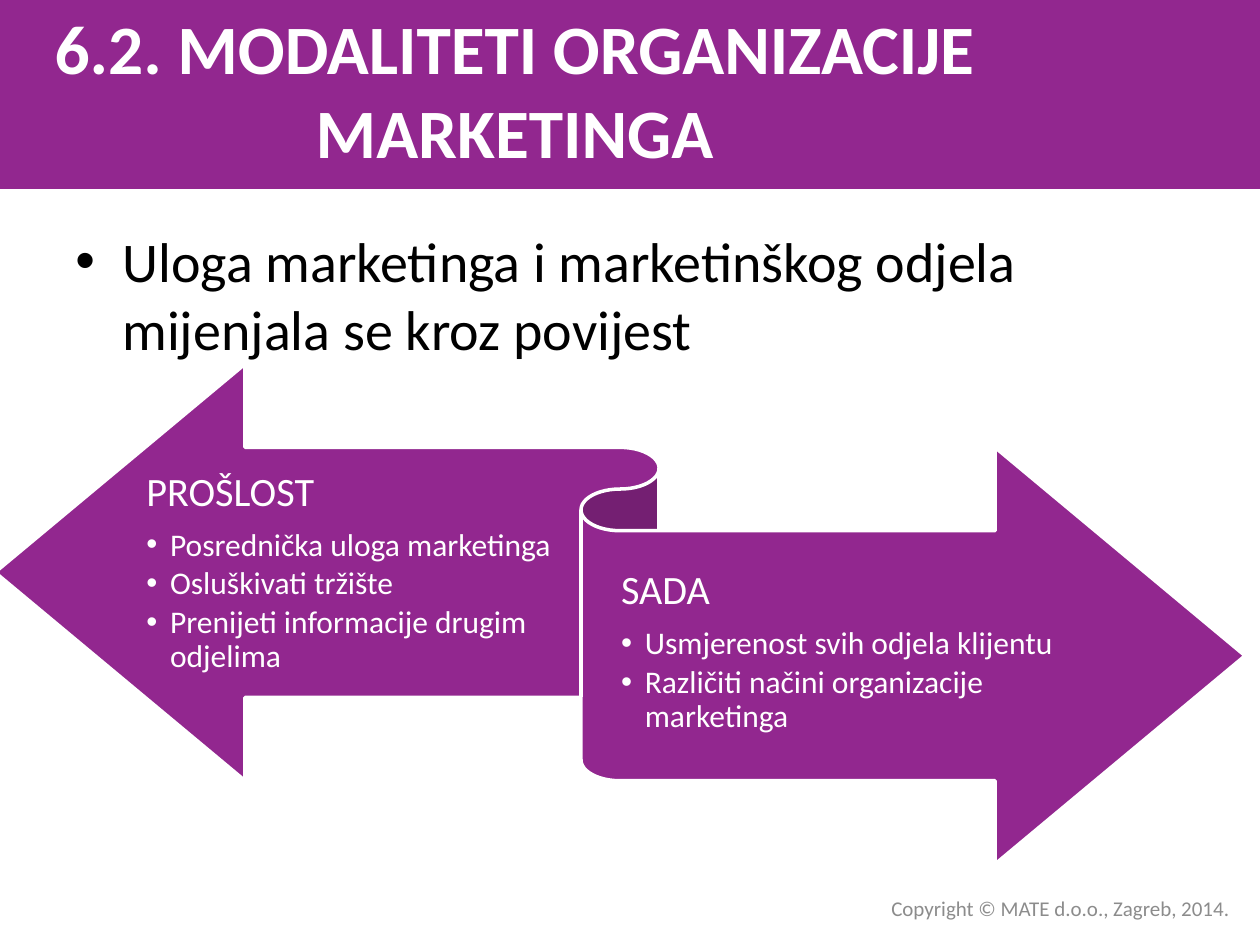
from dataclasses import dataclass

from lxml import etree
from pptx import Presentation
from pptx import util as u
from pptx.dml.color import RGBColor
from pptx.enum import shapes, text
from pptx.oxml.ns import qn

PURPLE = RGBColor(0x92, 0x27, 0x8F)
WHITE = RGBColor(0xFF, 0xFF, 0xFF)
BLACK = RGBColor(0, 0, 0)
GRAY = RGBColor(0x8C, 0x8C, 0x8C)
FONT = "Calibri"


@dataclass
class Box:
    left: float
    top: float
    width: float
    height: float

    def lengths(self) -> list[u.Cm]:
        return [u.Cm(value) for value in (self.left, self.top, self.width, self.height)]


@dataclass
class Period:
    box: Box
    heading: str
    points: list[str]


PERIODS = [
    Period(
        Box(2.95, 9.1, 8.31, 4.92),
        "PROŠLOST",
        [
            "Posrednička uloga marketinga",
            "Osluškivati tržište",
            "Prenijeti informacije drugim odjelima",
        ],
    ),
    Period(
        Box(12.52, 10.7, 9.83, 4.92),
        "SADA",
        ["Usmjerenost svih odjela klijentu", "Različiti načini organizacije marketinga"],
    ),
]


def format_paragraph(paragraph, size: float, color: RGBColor, bold: bool = False) -> None:
    for run in paragraph.runs:
        run.font.name = FONT
        run.font.size = u.Pt(size)
        run.font.bold = bold
        run.font.color.rgb = color


def add_bullet(paragraph, indent: float) -> None:
    properties = paragraph._p.get_or_add_pPr()
    properties.set("marL", str(u.Cm(indent)))
    properties.set("indent", str(-u.Cm(indent)))
    etree.SubElement(properties, qn("a:buFont"), typeface="Arial")
    etree.SubElement(properties, qn("a:buChar"), char="•")


def add_text_box(slide, box: Box, content: str, anchor):
    text_frame = slide.shapes.add_textbox(*box.lengths()).text_frame
    text_frame.word_wrap = True
    text_frame.vertical_anchor = anchor
    text_frame.text = content
    return text_frame


def add_preset(slide, kind, box: Box):
    shape = slide.shapes.add_shape(kind, *box.lengths())
    shape.shadow.inherit = False
    shape.fill.solid()
    shape.fill.fore_color.rgb = PURPLE
    return shape


def add_title(slide) -> None:
    title = slide.shapes.title
    title.left, title.top, title.width, title.height = Box(0, 0.2, 20.75, 3.18).lengths()
    text_frame = title.text_frame
    text_frame.text = "6.2. MODALITETI ORGANIZACIJE MARKETINGA"
    text_frame.auto_size = text.MSO_AUTO_SIZE.NONE
    text_frame.vertical_anchor = text.MSO_ANCHOR.MIDDLE
    text_frame.paragraphs[0].alignment = text.PP_ALIGN.CENTER
    format_paragraph(text_frame.paragraphs[0], 39.6, WHITE, bold=True)
    band = add_preset(slide, shapes.MSO_SHAPE.RECTANGLE, Box(0, 0, 25.4, 3.81))
    band.line.fill.background()
    title.element.addprevious(band.element)


def add_period(slide, period: Period) -> None:
    content = "\n".join([period.heading, *period.points])
    text_frame = add_text_box(slide, period.box, content, text.MSO_ANCHOR.MIDDLE)
    text_frame.margin_left = text_frame.margin_right = 0
    text_frame.margin_top, text_frame.margin_bottom = u.Cm(0.23), u.Cm(0.25)
    heading, *points = text_frame.paragraphs
    heading.line_spacing = 0.9
    heading.space_after = u.Pt(8)
    format_paragraph(heading, 23, WHITE)
    for point in points:
        add_bullet(point, 0.48)
        point.level = 1
        point.line_spacing = 0.9
        point.space_after = u.Pt(2.7)
        format_paragraph(point, 18, WHITE)


def main() -> None:
    presentation = Presentation()
    presentation.slide_width, presentation.slide_height = u.Cm(25.4), u.Cm(19.05)
    slide = presentation.slides.add_slide(presentation.slide_layouts[5])
    add_title(slide)

    body = add_text_box(
        slide,
        Box(1.27, 4.45, 22.86, 3.89),
        "Uloga marketinga i marketinškog odjela mijenjala se kroz povijest",
        text.MSO_ANCHOR.TOP,
    ).paragraphs[0]
    add_bullet(body, 0.95)
    format_paragraph(body, 32, BLACK)

    ribbon = add_preset(
        slide, shapes.MSO_SHAPE.LEFT_RIGHT_RIBBON, Box(-0.1, 7.34, 25.2, 10.08)
    )
    ribbon.line.color.rgb = WHITE
    ribbon.line.width = u.Pt(2)
    for period in PERIODS:
        add_period(slide, period)

    copyright_line = add_text_box(
        slide,
        Box(11.91, 17.93, 13.13, 0.76),
        "Copyright © MATE d.o.o., Zagreb, 2014.",
        text.MSO_ANCHOR.MIDDLE,
    ).paragraphs[0]
    copyright_line.alignment = text.PP_ALIGN.RIGHT
    format_paragraph(copyright_line, 12, GRAY)

    presentation.save("out.pptx")


if __name__ == "__main__":
    main()
